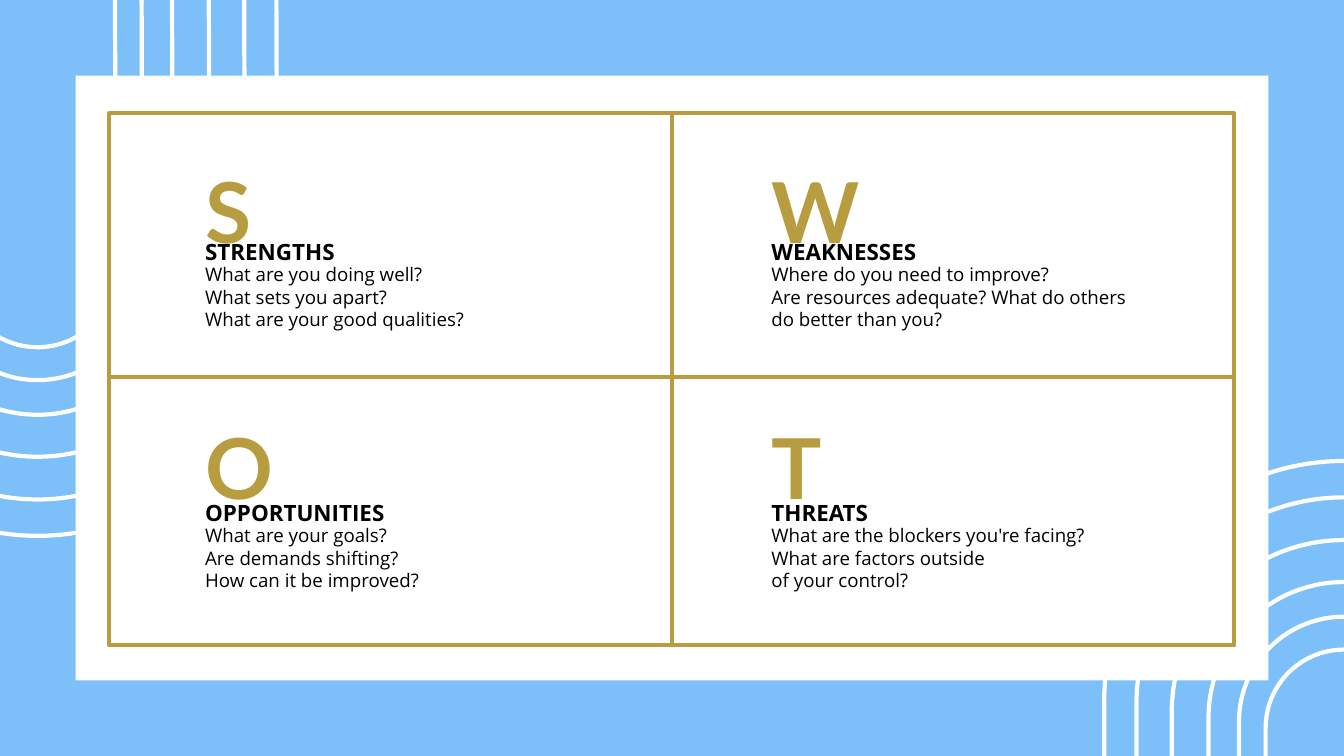
import pptx
import pptx.util
import pptx.dml.color
import pptx.enum.shapes
import pptx.enum.text
import lxml.etree
from dataclasses import dataclass
from itertools import product

SCALE = 9525
RECT = pptx.enum.shapes.MSO_SHAPE.RECTANGLE
ARCH = pptx.enum.shapes.MSO_SHAPE.ROUND_2_SAME_RECTANGLE


@dataclass(frozen=True)
class Theme:
    sky: str = "7DBFF8"
    white: str = "FFFFFF"
    gold: str = "B89D40"
    ink: str = "000000"
    serif: str = "Lato"
    sans: str = "Open Sans"
    giant: int = 90
    head: int = 24
    body: int = 20
    line: float = 4.5


THEME = Theme()
SIZES = [(685, 1115), (593, 1011), (492, 889), (387, 769), (300, 670), (224, 576)]
QUADS = [
    ("S", "STRENGTHS", ["What are you doing well?", "What sets you apart?",
                        "What are your good qualities?"]),
    ("W", "WEAKNESSES", ["Where do you need to improve?",
                         "Are resources adequate? What do others",
                         "do better than you?"]),
    ("O", "OPPORTUNITIES", ["What are your goals?", "Are demands shifting?",
                            "How can it be improved?"]),
    ("T", "THREATS", ["What are the blockers you're facing?",
                      "What are factors outside", "of your control?"]),
]


def px(*nums):
    return [pptx.util.Emu(round(n * SCALE)) for n in nums]


def rgb(code):
    return pptx.dml.color.RGBColor.from_string(code)


def stroke(item, color):
    item.line.color.rgb = rgb(color)
    item.line.width = pptx.util.Pt(THEME.line)


def shape(slide, kind, box, fill=None, line=None):
    item = slide.shapes.add_shape(kind, *px(*box))
    item.shadow.inherit = False
    if fill:
        item.fill.solid()
        item.fill.fore_color.rgb = rgb(fill)
    else:
        item.fill.background()
    if line:
        stroke(item, line)
    else:
        item.line.fill.background()
    return item


def rule(slide, start, end):
    item = slide.shapes.add_connector(
        pptx.enum.shapes.MSO_CONNECTOR.STRAIGHT, *px(*start, *end))
    stroke(item, THEME.gold)
    lxml.etree.SubElement(item._element.spPr, pptx.oxml.ns.qn("a:effectLst"))
    return item


def text(slide, box, lines, font, size, color, bold=False, space=None):
    frame = slide.shapes.add_textbox(*px(*box)).text_frame
    frame.margin_left = frame.margin_right = 0
    frame.margin_top = frame.margin_bottom = 0
    frame.word_wrap = True
    frame.auto_size = pptx.enum.text.MSO_AUTO_SIZE.SHAPE_TO_FIT_TEXT
    frame.text = "\n".join(lines)
    for para in frame.paragraphs:
        para.line_spacing = space
        para.font.name = font
        para.font.size = pptx.util.Pt(size)
        para.font.bold = bold
        para.font.color.rgb = rgb(color)


def arches(slide, mid, turn):
    x, y = mid
    for wide, high in SIZES:
        box = (x - wide / 2, y - high / 2, wide, high)
        arch = shape(slide, ARCH, box, line=THEME.white)
        arch.adjustments[0] = 0.5
        arch.adjustments[1] = 0
        arch.rotation = turn


def grid(slide, box):
    x, y, wide, high = box
    frame = shape(slide, RECT, box, line=THEME.gold)
    post = rule(slide, (x + wide / 2, y), (x + wide / 2, y + high))
    post.begin_connect(frame, 0)
    post.end_connect(frame, 2)
    beam = y + 377
    rule(slide, (x, beam), (x + wide, beam))


def quad(slide, box, letter, title, lines):
    x, y, wide, high = box
    base = y + high
    text(slide, (x, base - 152, wide, 38), [title],
         THEME.sans, THEME.head, THEME.ink, True, 1.5)
    text(slide, (x, base - 97, wide, 97), lines,
         THEME.sans, THEME.body, THEME.ink)
    text(slide, (x, y, 130, 172), [letter],
         THEME.serif, THEME.giant, THEME.gold, True, 1.5)


def main():
    deck = pptx.Presentation()
    deck.slide_width, deck.slide_height = px(1920, 1080)
    slide = deck.slides.add_slide(deck.slide_layouts[6])
    back = slide.background.fill
    back.solid()
    back.fore_color.rgb = rgb(THEME.sky)

    arches(slide, (53, 208), 179.8)
    arches(slide, (1920, 1216), 0)
    shape(slide, RECT, (108, 108, 1704, 864), fill=THEME.white)
    grid(slide, (156, 162, 1607, 760))
    rows = [(156, 317), (522, 324)]
    for ((y, high), x), parts in zip(product(rows, (293, 1102)), QUADS):
        quad(slide, (x, y, 566, high), *parts)

    deck.save("out.pptx")


if __name__ == "__main__":
    main()
